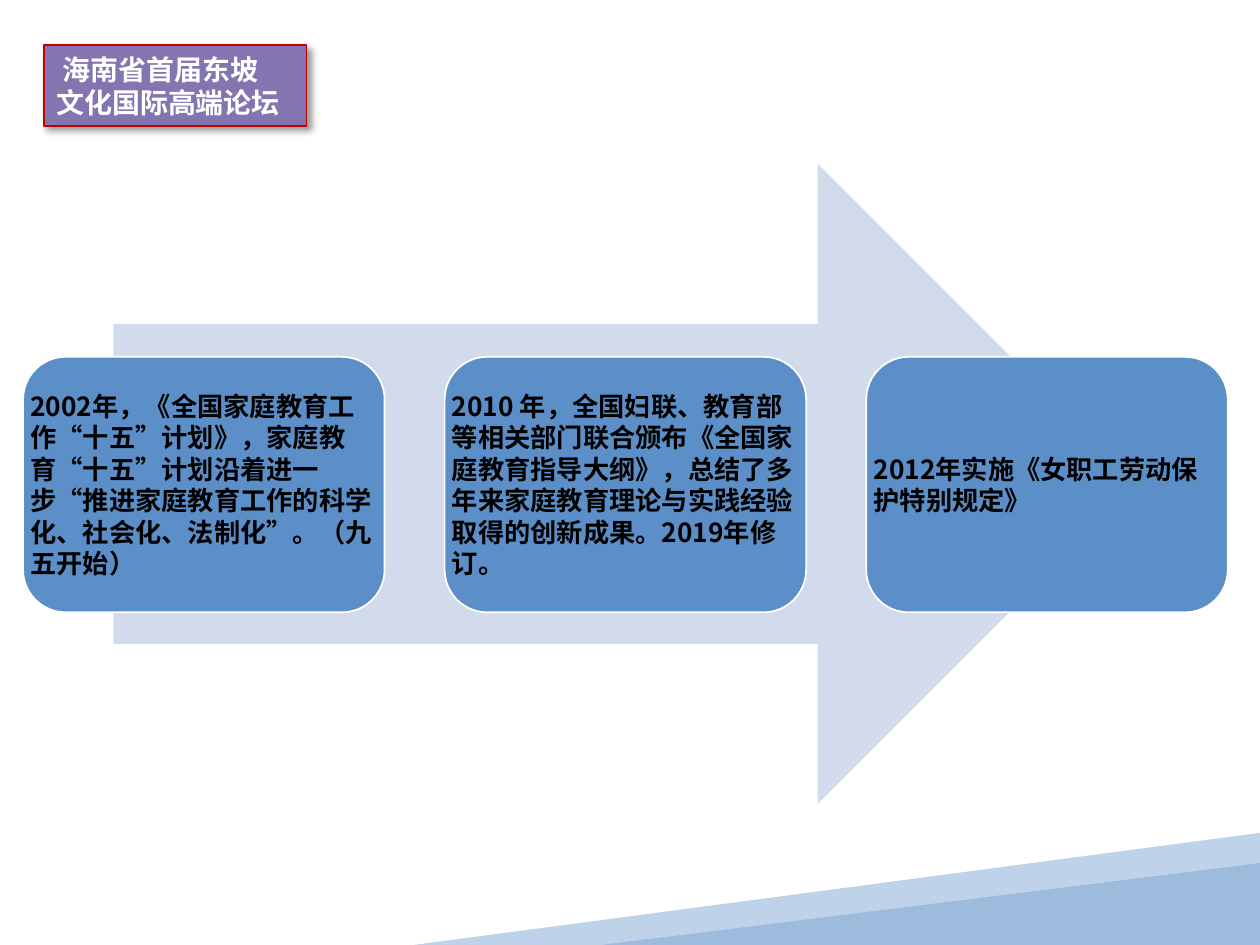
from lxml import etree
from pptx import Presentation
from pptx.dml.color import RGBColor
from pptx.enum.shapes import MSO_SHAPE as SHAPE
from pptx.enum.text import MSO_ANCHOR as ANCHOR, PP_ALIGN as ALIGN
from pptx.oxml.ns import qn
from pptx.util import Pt

FONT = "Noto Sans CJK SC"
FORUM = [" 海南省首届东坡", "文化国际高端论坛"]
MILESTONES = [
    "2002年，《全国家庭教育工作“十五”计划》，家庭教育“十五”计划沿着进一步“推进家庭教育工作的科学化、社会化、法制化”。（九五开始）",
    "2010 年，全国妇联、教育部等相关部门联合颁布《全国家庭教育指导大纲》，总结了多年来家庭教育理论与实践经验取得的创新成果。2019年修订。",
    "2012年实施《女职工劳动保护特别规定》",
]
WEDGE = [(720, 475.9), (720, 535.7), (484.6, 540), (236.2, 540)]
CARD_LEFT, CARD_TOP, CARD_WIDTH, CARD_HEIGHT = 13.2, 203.9, 206.6, 146
CARD_STEP = 240.9


def color(hex_code):
    return RGBColor.from_string(hex_code)


def paint(shape, fill, line=None):
    shape.shadow.inherit = False
    shape.fill.solid()
    shape.fill.fore_color.rgb = color(fill)
    if line:
        shape.line.color.rgb = color(line)
        shape.line.width = Pt(1)
    else:
        shape.line.fill.background()
    return shape


def add_preset(shapes, kind, box, fill, line=None):
    return paint(shapes.add_shape(kind, *map(Pt, box)), fill, line)


def write(shape, *lines, size, ink, spacing, inset=(7.2, 3.6)):
    """Fill a shape with bold, left-aligned, vertically centred paragraphs."""
    frame = shape.text_frame
    frame.word_wrap = True
    frame.vertical_anchor = ANCHOR.MIDDLE
    frame.margin_left = frame.margin_right = Pt(inset[0])
    frame.margin_top = frame.margin_bottom = Pt(inset[1])
    for number, line in enumerate(lines):
        paragraph = frame.add_paragraph() if number else frame.paragraphs[0]
        paragraph.alignment = ALIGN.LEFT
        paragraph.line_spacing = Pt(spacing)
        run = paragraph.add_run()
        run.text = line
        run.font.size = Pt(size)
        run.font.bold = True
        run.font.color.rgb = color(ink)
        run.font.name = FONT
        east_asian = etree.SubElement(run.font._element, qn("a:ea"))
        east_asian.set("typeface", FONT)


def cast_shadow(shape, blur, distance, angle, alpha):
    effects = shape._element.spPr.find(qn("a:effectLst"))
    shadow = etree.SubElement(
        effects, qn("a:outerShdw"), blurRad=str(Pt(blur)), dist=str(Pt(distance)),
        dir=str(angle * 60000), algn="tl", rotWithShape="0")
    tint = etree.SubElement(shadow, qn("a:srgbClr"), val="000000")
    etree.SubElement(tint, qn("a:alpha"), val=str(alpha * 1000))


def add_corner(shapes):
    points = [(Pt(x), Pt(y)) for x, y in WEDGE]
    outline = shapes.build_freeform(*points[0])
    outline.add_line_segments(points[1:], close=True)
    paint(outline.convert_to_shape(), "BED2E9")
    front = add_preset(shapes, SHAPE.ISOSCELES_TRIANGLE,
                       (343.4, 493.2, 376.6, 46.8), "9DBCDD")
    front.adjustments[0] = 1


def main():
    deck = Presentation()
    deck.slide_width, deck.slide_height = Pt(720), Pt(540)
    shapes = deck.slides.add_slide(deck.slide_layouts[6]).shapes

    add_corner(shapes)
    add_preset(shapes, SHAPE.RIGHT_ARROW, (64.8, 93.6, 585.4, 365.8), "D2DBEB")
    for number, milestone in enumerate(MILESTONES):
        box = (CARD_LEFT + number * CARD_STEP, CARD_TOP, CARD_WIDTH, CARD_HEIGHT)
        add_preset(shapes, SHAPE.ROUNDED_RECTANGLE, box, "5C8FC7", "FFFFFF")
        write(shapes.add_textbox(*map(Pt, box)), milestone,
              size=15, ink="000000", spacing=18, inset=(4.2, 4.2))

    banner = add_preset(shapes, SHAPE.RECTANGLE, (25.2, 25.9, 150, 46), "8376B0", "C00000")
    cast_shadow(banner, blur=4, distance=3, angle=45, alpha=40)
    write(banner, *FORUM, size=16, ink="FFFFFF", spacing=19)

    deck.save("out.pptx")


if __name__ == "__main__":
    main()
